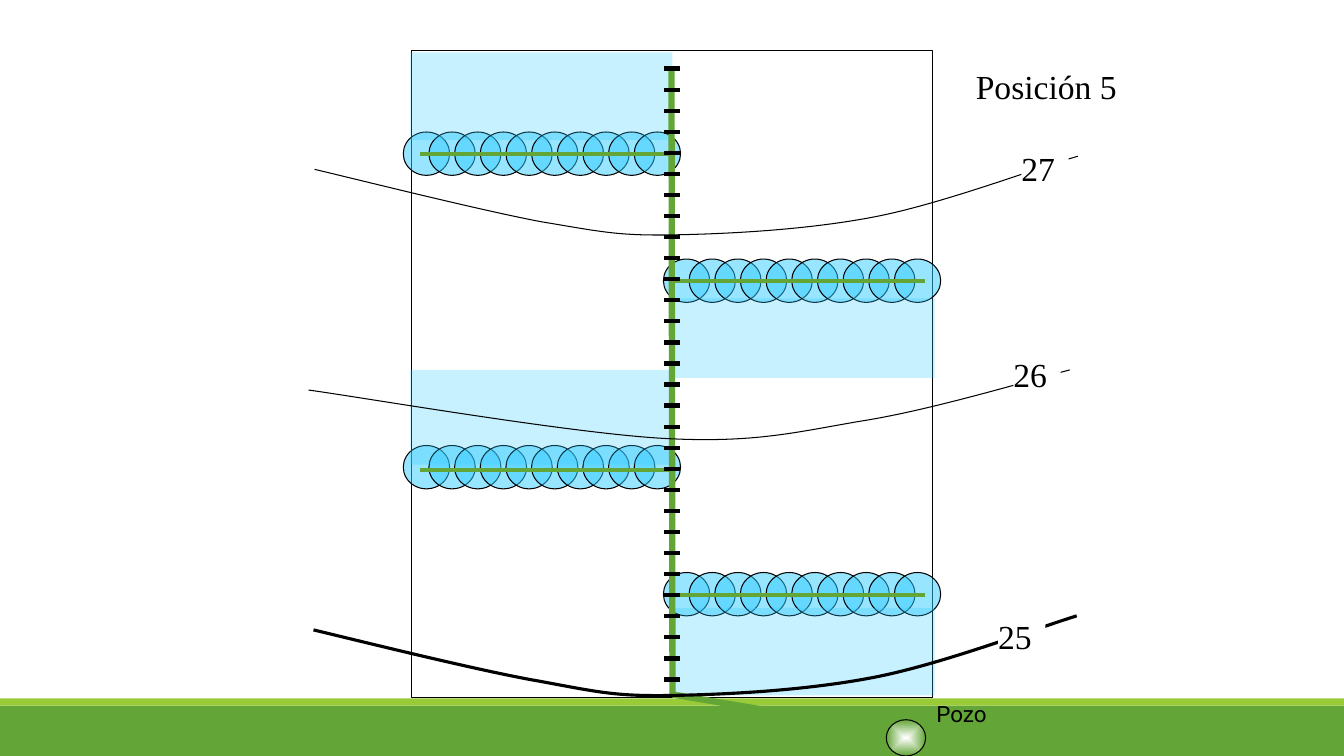
from pptx import Presentation
from pptx.dml.color import RGBColor
from pptx.enum.shapes import MSO_CONNECTOR as Connector, MSO_SHAPE as Shape
from pptx.enum.text import MSO_ANCHOR as Anchor, PP_ALIGN as Align
from pptx.oxml.ns import qn
from pptx.util import Inches, Pt
from lxml.etree import SubElement

COLORS = {
    "green": "63A537",
    "lime": "99CB38",
    "water": "33CCFF",
    "black": "000000",
    "white": "FFFFFF",
}
SERIF, SANS = "Times New Roman", "Roboto"
AXIS_X = 6.67
SPRINKLERS, SPRINKLER_STEP = 10, 0.2545
HYDRANTS, HYDRANT_TOP, HYDRANT_STEP = 30, 0.68, 0.209

# Row of sprinklers: left edge, top of circles, start and height of pipe
LATERALS = [
    (6.58, 5.68, 6.67, 5.90),
    (4.00, 4.42, 4.17, 4.66),
    (6.58, 2.57, 6.67, 2.79),
    (4.00, 1.31, 4.17, 1.53),
]
# Irrigated strips: left, top, height
STRIPS = [(4.07, 3.67, 0.94), (4.07, 0.52, 0.87), (6.67, 2.96, 0.79), (6.67, 6.03, 0.87)]

# Contours: line width, start point, then two control points and an end per curve
CONTOURS = [
    (2.25, [(3.11, 6.25), (3.49, 6.34), (4.77, 6.66), (5.36, 6.76),
            (5.95, 6.87), (6.12, 6.91), (6.67, 6.90),
            (7.22, 6.89), (8.00, 6.85), (8.67, 6.72),
            (9.34, 6.59), (10.26, 6.24), (10.68, 6.11)]),
    (0.75, [(3.06, 3.87), (3.64, 3.95), (5.67, 4.30), (6.59, 4.35),
            (7.51, 4.40), (7.92, 4.28), (8.59, 4.17),
            (9.26, 4.06), (10.19, 3.78), (10.61, 3.67)]),
    (0.75, [(3.12, 1.68), (3.50, 1.77), (4.78, 2.09), (5.37, 2.20),
            (5.97, 2.30), (6.13, 2.34), (6.68, 2.33),
            (7.23, 2.32), (8.01, 2.28), (8.68, 2.15),
            (9.35, 2.02), (10.27, 1.67), (10.69, 1.55)]),
]
ELEVATIONS = [("25", 9.90, 6.11), ("26", 10.05, 3.51), ("27", 10.13, 1.47)]


def rgb(name):
    return RGBColor.from_string(COLORS[name])


def set_outline(shape, color, width):
    shape.line.color.rgb = rgb(color)
    shape.line.width = Pt(width)


def add_area(page, kind, bounds, fill=None, alpha=None, outline=None):
    area = page.shapes.add_shape(kind, *map(Inches, bounds))
    area.shadow.inherit = False
    if fill:
        area.fill.solid()
        area.fill.fore_color.rgb = rgb(fill)
    else:
        area.fill.background()
    if alpha:
        tint = next(area.element.spPr.iter(qn("a:srgbClr")))
        SubElement(tint, qn("a:alpha"), val=str(alpha * 1000))
    if outline:
        set_outline(area, outline, 0.75)
    else:
        area.line.fill.background()
    return area


def add_segment(page, start, end, color, width):
    segment = page.shapes.add_connector(Connector.STRAIGHT, *map(Inches, start + end))
    set_outline(segment, color, width)
    SubElement(segment.element.spPr, qn("a:effectLst"))


def add_contour(page, points, width):
    start, *rest = [(Inches(x), Inches(y)) for x, y in points]
    builder = page.shapes.build_freeform(*start, scale=1.0)
    builder.add_line_segments(rest, close=False)
    contour = builder.convert_to_shape()
    contour.shadow.inherit = False
    contour.fill.background()
    set_outline(contour, "black", width)
    # Turn each three straight steps into one Bézier curve
    steps = list(contour.element.spPr.iter(qn("a:lnTo")))
    outline = steps[0].getparent()
    for first in range(0, len(steps), 3):
        curve = SubElement(outline, qn("a:cubicBezTo"))
        for step in steps[first:first + 3]:
            curve.append(step[0])
            outline.remove(step)


def write_text(box, text, font, size, margins=None):
    frame = box.text_frame
    settings = {"word_wrap": True, "vertical_anchor": Anchor.TOP}
    if margins is not None:
        for side in ("left", "right", "top", "bottom"):
            settings[f"margin_{side}"] = Inches(margins)
    for name, value in settings.items():
        setattr(frame, name, value)
    para = frame.paragraphs[0]
    para.alignment = Align.LEFT
    span = para.add_run()
    span.text = text
    for name, value in {"name": font, "size": Pt(size)}.items():
        setattr(span.font, name, value)
    span.font.color.rgb = rgb("black")


def add_label(page, bounds, text, font, size):
    box = page.shapes.add_textbox(*map(Inches, bounds))
    write_text(box, text, font, size)


def add_lateral(page, left, top, pipe_x, pipe_y):
    for index in range(SPRINKLERS):
        bounds = (left + index * SPRINKLER_STEP, top, 0.46, 0.43)
        add_area(page, Shape.OVAL, bounds, "water", 50, "black")
    add_segment(page, (pipe_x, pipe_y), (pipe_x + 2.5, pipe_y), "green", 3)


def add_well(page):
    well = add_area(page, Shape.OVAL, (8.79, 7.14, 0.39, 0.36), outline="black")
    well.fill.gradient()
    for stop, color in zip(well.fill.gradient_stops, ("white", "green")):
        stop.color.rgb = rgb(color)
    for stop, position in zip(well.fill.gradient_stops, (0, 1)):
        stop.position = position
    gradient = well.element.spPr.find(qn("a:gradFill"))
    gradient.remove(gradient.find(qn("a:lin")))
    radial = SubElement(gradient, qn("a:path"), path="shape")
    SubElement(radial, qn("a:fillToRect"), l="50000", t="50000", r="50000", b="50000")
    add_label(page, (9.19, 6.9, 1.1, 0.37), "Pozo", SANS, 16)


def main():
    deck = Presentation()
    deck.slide_width, deck.slide_height = Inches(13.33), Inches(7.5)
    page = deck.slides.add_slide(deck.slide_layouts[6])

    # Footer bands and field
    add_area(page, Shape.RECTANGLE, (0, 7, 13.33, 0.5), "green")
    add_area(page, Shape.RECTANGLE, (0, 6.93, 13.33, 0.07), "lime")
    add_area(page, Shape.RECTANGLE, (4.08, 0.5, 5.17, 6.42), outline="black")

    # Sprinkler laterals and irrigated strips
    for lateral in LATERALS:
        add_lateral(page, *lateral)
    for left, top, height in STRIPS:
        add_area(page, Shape.RECTANGLE, (left, top, 2.6, height), "water", 27)
    add_label(page, (9.58, 0.6, 1.73, 0.5), "Posición 5", SERIF, 24)

    # Main pipe with its hydrants
    add_segment(page, (AXIS_X, 6.91), (6.66, 0.68), "green", 4.5)
    add_segment(page, (AXIS_X, 6.89), (8.83, 7.25), "green", 4.5)
    for index in range(HYDRANTS):
        y = HYDRANT_TOP + index * HYDRANT_STEP
        add_segment(page, (6.59, y), (6.74, y), "black", 3)

    # Well, contours and their elevations
    add_well(page)
    for width, points in CONTOURS:
        add_contour(page, points, width)
    for text, left, top in ELEVATIONS:
        plate = add_area(page, Shape.RECTANGLE, (left, top, 0.47, 0.4), "white")
        write_text(plate, text, SERIF, 24, margins=0)

    deck.save("out.pptx")


if __name__ == "__main__":
    main()
